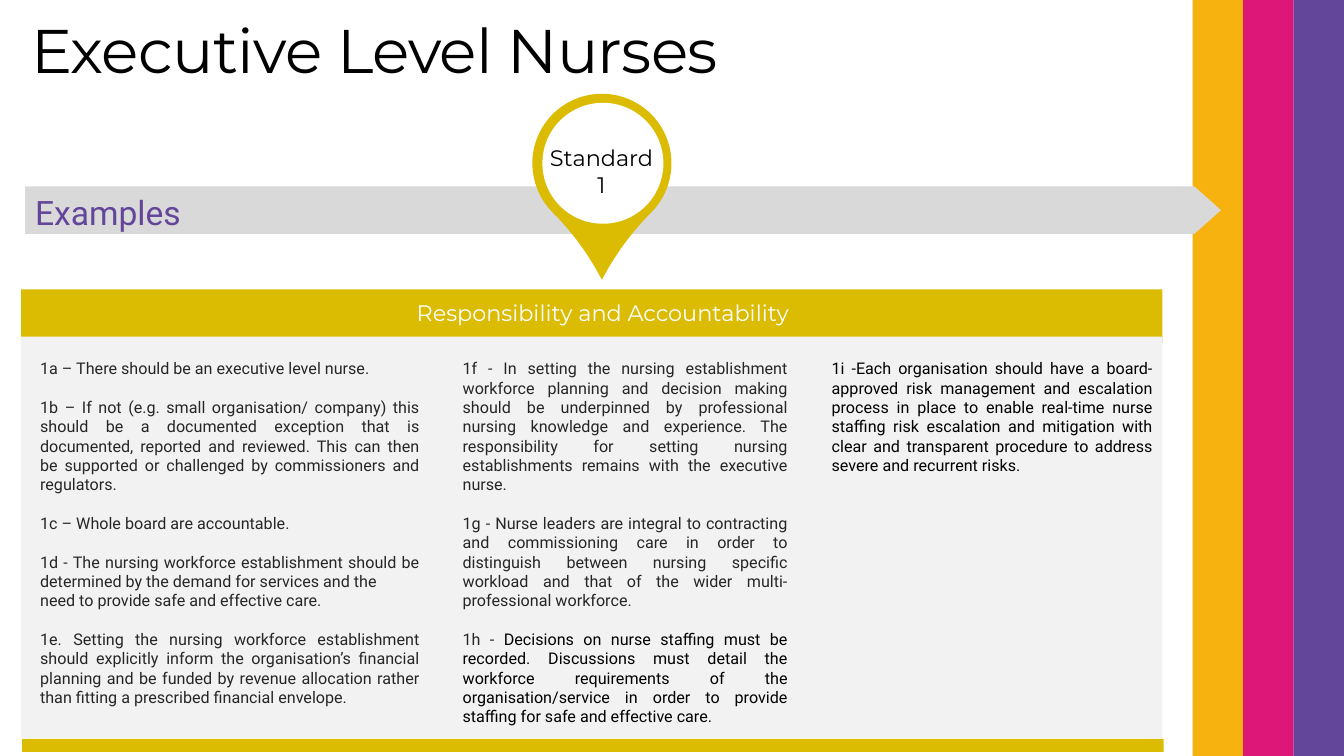
from pptx import Presentation
from pptx.dml.color import RGBColor
from pptx.enum.shapes import MSO_SHAPE
from pptx.enum.text import MSO_ANCHOR, PP_ALIGN
from pptx.util import Inches, Pt

GOLD = "DBBC03"
PURPLE = "63469A"
BLACK = "000000"
DARK = "262626"
LINE_GAP = 13.8


def add_shape(kind, x, y, w, h, color):
    sp = s.shapes.add_shape(kind, Inches(x), Inches(y), Inches(w), Inches(h))
    sp.shadow.inherit = False
    sp.fill.solid()
    sp.fill.fore_color.rgb = RGBColor.from_string(color)
    sp.line.fill.background()
    return sp


def add_text(x, y, w, h, lines, font, size, color, align=PP_ALIGN.LEFT,
             anchor=MSO_ANCHOR.TOP, wrap=True):
    box = s.shapes.add_textbox(Inches(x), Inches(y), Inches(w), Inches(h))
    tf = box.text_frame
    tf.word_wrap = wrap
    tf.vertical_anchor = anchor
    for i, (text, gap) in enumerate(lines):
        p = tf.paragraphs[0] if i == 0 else tf.add_paragraph()
        p.alignment = align
        p.space_before = Pt(gap)
        p.font.name = font
        p.font.size = Pt(size)
        p.font.color.rgb = RGBColor.from_string(color)
        p.add_run().text = text
    return tf


prs = Presentation()
prs.slide_width = Inches(13.33)
prs.slide_height = Inches(7.5)
s = prs.slides.add_slide(prs.slide_layouts[6])

for i, color in enumerate(["F7B20F", "DD1778", PURPLE]):
    add_shape(MSO_SHAPE.RECTANGLE, 11.83 + 0.5 * i, 0, 0.5, 7.5, color)

arrow = add_shape(MSO_SHAPE.RIGHT_ARROW, 0.25, 1.85, 11.86, 0.47, "D9D9D9")
arrow.adjustments[0] = 1
arrow.adjustments[1] = 0.56

pin = add_shape(MSO_SHAPE.TEAR, 5.28, 0.93, 1.38, 1.38, GOLD)
pin.adjustments[0] = 1.184
pin.rotation = 135
add_shape(MSO_SHAPE.OVAL, 5.38, 1.02, 1.2, 1.2, "FFFFFF")
add_text(5.34, 1.38, 1.25, 0.64, [("Standard", 0), ("1", 0)], "Montserrat", 16,
         BLACK, PP_ALIGN.CENTER, MSO_ANCHOR.MIDDLE, wrap=False)

add_shape(MSO_SHAPE.RECTANGLE, 0.21, 2.87, 11.32, 0.53, GOLD)
add_shape(MSO_SHAPE.RECTANGLE, 0.21, 3.34, 11.32, 3.98, "F2F2F2")
add_shape(MSO_SHAPE.RECTANGLE, 0.22, 7.33, 11.32, 0.13, GOLD)
add_text(0.73, 2.92, 10.5, 0.37, [("Responsibility and Accountability", 0)],
         "Montserrat", 16, "FFFFFF", PP_ALIGN.CENTER)

title = add_text(0.21, 0.02, 10.6, 0.89, [("Executive Level Nurses", 0)],
                 "Montserrat", 44, BLACK, anchor=MSO_ANCHOR.BOTTOM)
p = title.paragraphs[0]
p.line_spacing = 0.9
p.runs[0]._r.get_or_add_rPr().set("spc", "-50")

columns = [
    (0.3, 3.96, 3.78, DARK, [
        ("1a – There should be an executive level nurse.", 0),
        ("1b – If not (e.g. small organisation/ company) this should be a documented "
         "exception that is documented, reported and reviewed. This can then be "
         "supported or challenged by commissioners and regulators.", LINE_GAP),
        ("1c – Whole board are accountable.", LINE_GAP),
        ("1d - The nursing workforce establishment should be determined by the "
         "demand for services and the", LINE_GAP),
        ("need to provide safe and effective care.", 0),
        ("1e. Setting the nursing workforce establishment should explicitly inform "
         "the organisation’s financial planning and be funded by revenue allocation "
         "rather than fitting a prescribed financial envelope.", LINE_GAP),
    ]),
    (4.49, 3.42, 3.97, DARK, [
        ("1f - In setting the nursing establishment workforce planning and decision "
         "making should be underpinned by professional nursing knowledge and "
         "experience. The responsibility for setting nursing establishments remains "
         "with the executive nurse.", 0),
        ("1g - Nurse leaders are integral to contracting and commissioning care in "
         "order to distinguish between nursing specific workload and that of the "
         "wider multi-professional workforce.", LINE_GAP),
        ("1h - ", LINE_GAP),
    ]),
    (8.15, 3.38, 1.26, BLACK, [
        ("1i -Each organisation should have a board-approved risk management and "
         "escalation process in place to enable real-time nurse staffing risk "
         "escalation and mitigation with clear and transparent procedure to address "
         "severe and recurrent risks.", 0),
    ]),
]
frames = [add_text(x, 3.51, w, h, lines, "Roboto", 11.5, color, PP_ALIGN.JUSTIFY)
          for x, w, h, color, lines in columns]

r = frames[1].paragraphs[-1].add_run()
r.text = ("Decisions on nurse staffing must be recorded. Discussions must detail the "
          "workforce requirements of the organisation/service in order to provide "
          "staffing for safe and effective care.")
r.font.color.rgb = RGBColor.from_string(BLACK)

add_text(0.25, 1.85, 1.76, 0.5, [("Examples", 0)], "Roboto", 24, PURPLE, wrap=False)

prs.save("out.pptx")
